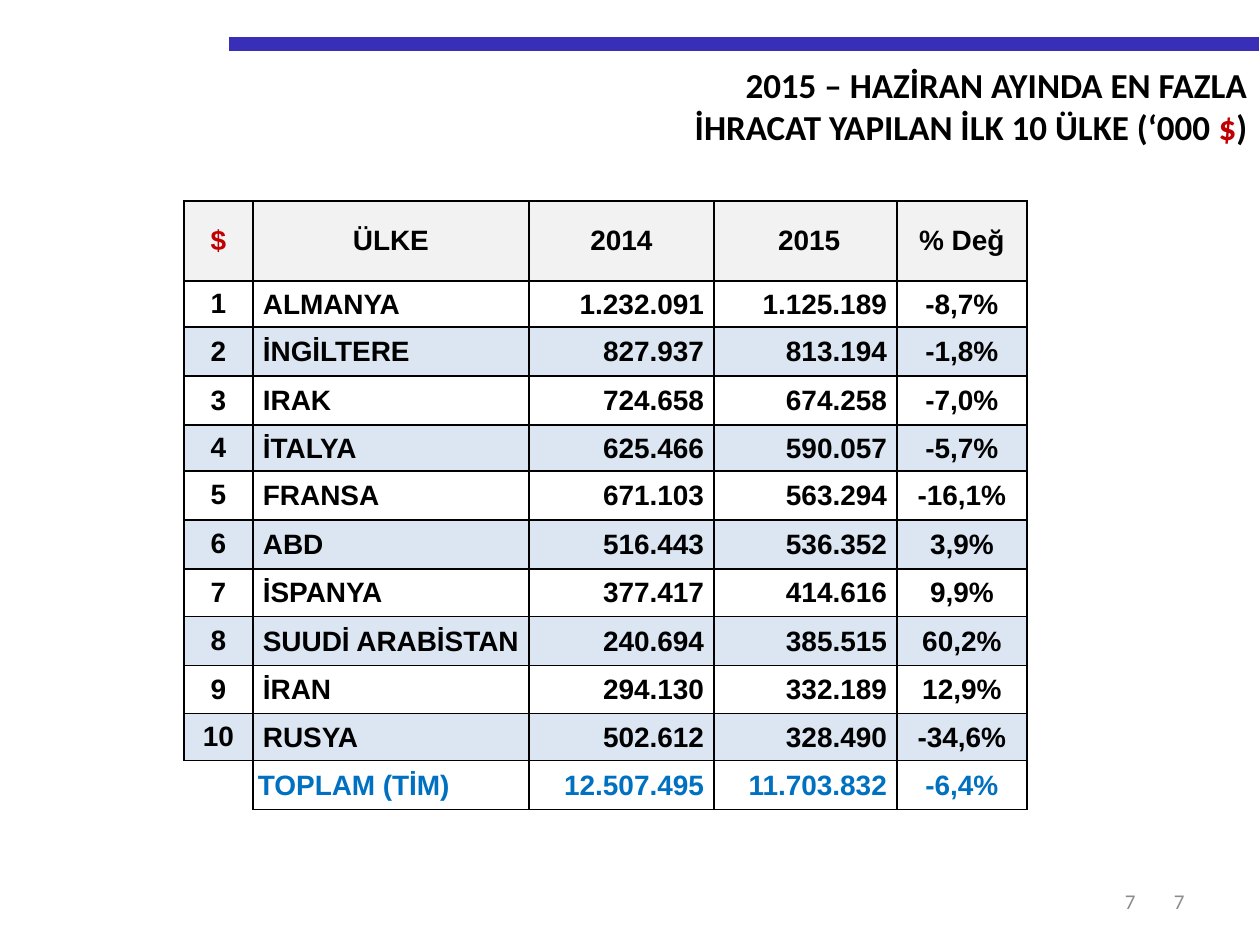
from lxml import etree
from pptx import Presentation
from pptx import util as u
from pptx.dml.color import RGBColor
from pptx.enum import shapes, text
from pptx.oxml.ns import qn

PX = u.Inches(1) // 126
BLACK, RED, BLUE, GRAY = "000000", "C00000", "0070C0", "8C8C8C"
HEADER_FILL, BAND_FILL, BAR = "F2F2F2", "DCE6F2", "382EB8"
LEFT, CENTER, RIGHT = text.PP_ALIGN.LEFT, text.PP_ALIGN.CENTER, text.PP_ALIGN.RIGHT

COLUMN_WIDTHS = [69, 276, 185, 183, 130]
ROW_HEIGHTS = [80, 46, 49, 49, 46, 49, 49, 48, 49, 48, 47, 49]
COLUMN_ALIGNMENTS = [CENTER, LEFT, RIGHT, RIGHT, CENTER]
# Left, top, right and bottom
WIDE_MARGINS = (13, 6, 13, 6)
COLUMN_MARGINS = [WIDE_MARGINS, (10, 1, 1, 0), (1, 1, 10, 0), (1, 1, 10, 0), (1, 1, 1, 0)]
TOTAL_NAME_MARGINS = (5, 1, 1, 0)

HEADINGS = ["$", "ÜLKE", "2014", " 2015", "% Değ"]
COUNTRIES = [
    ("ALMANYA", "1.232.091", "1.125.189", "-8,7%"),
    ("İNGİLTERE", "827.937", "813.194", "-1,8%"),
    ("IRAK", "724.658", "674.258", "-7,0%"),
    ("İTALYA", "625.466", "590.057", "-5,7%"),
    ("FRANSA", "671.103", "563.294", "-16,1%"),
    ("ABD", "516.443", "536.352", "3,9%"),
    ("İSPANYA", "377.417", "414.616", "9,9%"),
    ("SUUDİ ARABİSTAN", "240.694", "385.515", "60,2%"),
    ("İRAN", "294.130", "332.189", "12,9%"),
    ("RUSYA", "502.612", "328.490", "-34,6%"),
]
TOTAL = ["", "TOPLAM (TİM)", "12.507.495", "11.703.832", "-6,4%"]


def rgb(color):
    return RGBColor.from_string(color)


def emu(box):
    return [length * PX for length in box]


def add_run(paragraph, words, font, size, color, bold=False):
    run = paragraph.add_run()
    run.text = words
    run.font.name, run.font.size, run.font.bold = font, u.Pt(size), bold
    run.font.color.rgb = rgb(color)


def add_top_bar(slide, left, y, right):
    bar = slide.shapes.add_connector(
        shapes.MSO_CONNECTOR.STRAIGHT, *emu((left, y, right, y)))
    bar.line.color.rgb = rgb(BAR)
    bar.line.width = u.Pt(8.5)
    etree.SubElement(bar._element.spPr, qn("a:effectLst"))


def add_title(slide, box):
    title = slide.shapes.title
    title.left, title.top, title.width, title.height = emu(box)
    frame = title.text_frame
    frame.word_wrap = True
    frame.auto_size = text.MSO_AUTO_SIZE.SHAPE_TO_FIT_TEXT
    frame.vertical_anchor = text.MSO_ANCHOR.TOP
    lines = [
        [("2015 – HAZİRAN AYINDA EN FAZLA", BLACK)],
        [("İHRACAT YAPILAN İLK 10 ÜLKE (‘000 ", BLACK), ("$", RED), (")", BLACK)],
    ]
    for index, line in enumerate(lines):
        paragraph = frame.add_paragraph() if index else frame.paragraphs[0]
        paragraph.alignment = RIGHT
        for words, color in line:
            add_run(paragraph, words, "Calibri", 20, color, bold=True)


def add_page_number(slide, box):
    frame = slide.shapes.add_textbox(*emu(box)).text_frame
    frame.word_wrap = True
    frame.vertical_anchor = text.MSO_ANCHOR.MIDDLE
    paragraph = frame.paragraphs[0]
    paragraph.alignment = RIGHT
    add_run(paragraph, "7", "Calibri", 12, GRAY)


def set_borders(cell, visible):
    """Draw the sides named in visible (out of LRTB) and hide the others."""
    properties = cell._tc.get_or_add_tcPr()
    for position, side in enumerate("LRTB"):
        border = etree.Element(qn(f"a:ln{side}"), w=str(u.Pt(1)))
        if side in visible:
            fill = etree.SubElement(border, qn("a:solidFill"))
            etree.SubElement(fill, qn("a:srgbClr"), val=BLACK)
        else:
            etree.SubElement(border, qn("a:noFill"))
        properties.insert(position, border)


def format_cell(cell, words, color, fill, alignment, margins):
    if fill:
        cell.fill.solid()
        cell.fill.fore_color.rgb = rgb(fill)
    else:
        cell.fill.background()
    set_borders(cell, "LRTB" if words else "RT")
    (cell.margin_left, cell.margin_top,
     cell.margin_right, cell.margin_bottom) = emu(margins)
    cell.vertical_anchor = text.MSO_ANCHOR.MIDDLE
    if words:
        paragraph = cell.text_frame.paragraphs[0]
        paragraph.alignment = alignment
        add_run(paragraph, words, "Arial", 16, color, bold=True)


def add_export_table(slide, left, top):
    ranked = [[str(rank), *country] for rank, country in enumerate(COUNTRIES, 1)]
    rows = [HEADINGS, *ranked, TOTAL]
    total_row = len(rows) - 1
    box = (left, top, sum(COLUMN_WIDTHS), sum(ROW_HEIGHTS))
    table = slide.shapes.add_table(len(rows), len(HEADINGS), *emu(box)).table
    table.first_row = table.horz_banding = False
    for column, width in zip(table.columns, COLUMN_WIDTHS):
        column.width = width * PX
    for row, height in zip(table.rows, ROW_HEIGHTS):
        row.height = height * PX

    for r, values in enumerate(rows):
        for c, words in enumerate(values):
            color, fill = BLACK, None
            alignment, margins = COLUMN_ALIGNMENTS[c], COLUMN_MARGINS[c]
            if r == 0:
                color, fill = RED if c == 0 else BLACK, HEADER_FILL
                alignment, margins = CENTER, WIDE_MARGINS
            elif r == total_row:
                color = BLUE
                if c == 0:
                    margins = (0, 0, 0, 0)
                elif c == 1:
                    margins = TOTAL_NAME_MARGINS
            elif r % 2 == 0:
                fill = BAND_FILL
            format_cell(table.cell(r, c), words, color, fill, alignment, margins)


def main():
    presentation = Presentation()
    presentation.slide_width, presentation.slide_height = emu((1260, 945))
    slide = presentation.slides.add_slide(presentation.slide_layouts[5])
    add_page_number(slide, (903, 876, 294, 50))
    add_top_bar(slide, 229, 44, 1259)
    add_page_number(slide, (883, 876, 265, 50))
    add_title(slide, (134, 57, 1126, 97))
    add_export_table(slide, 184, 201)
    presentation.save("out.pptx")


if __name__ == "__main__":
    main()
